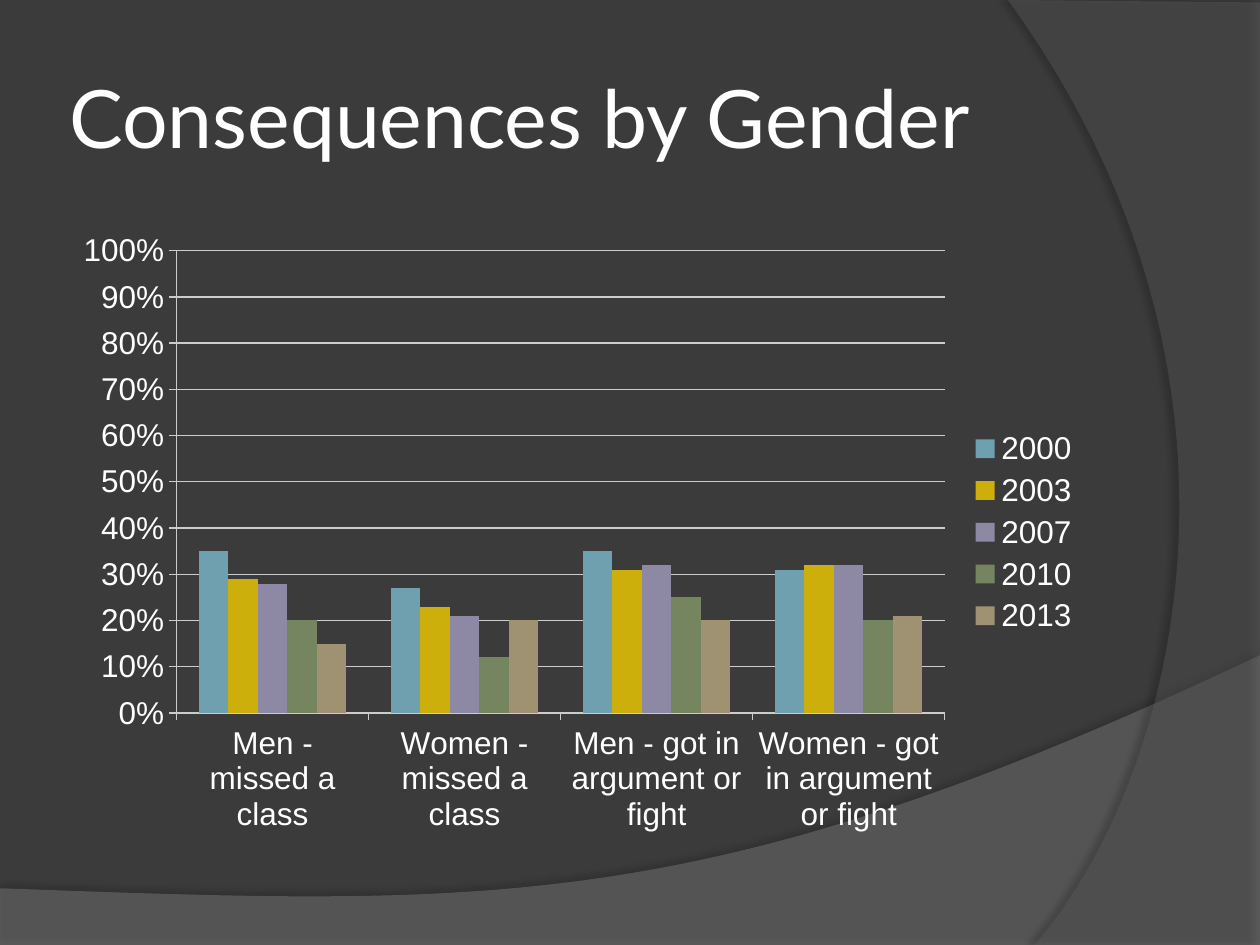
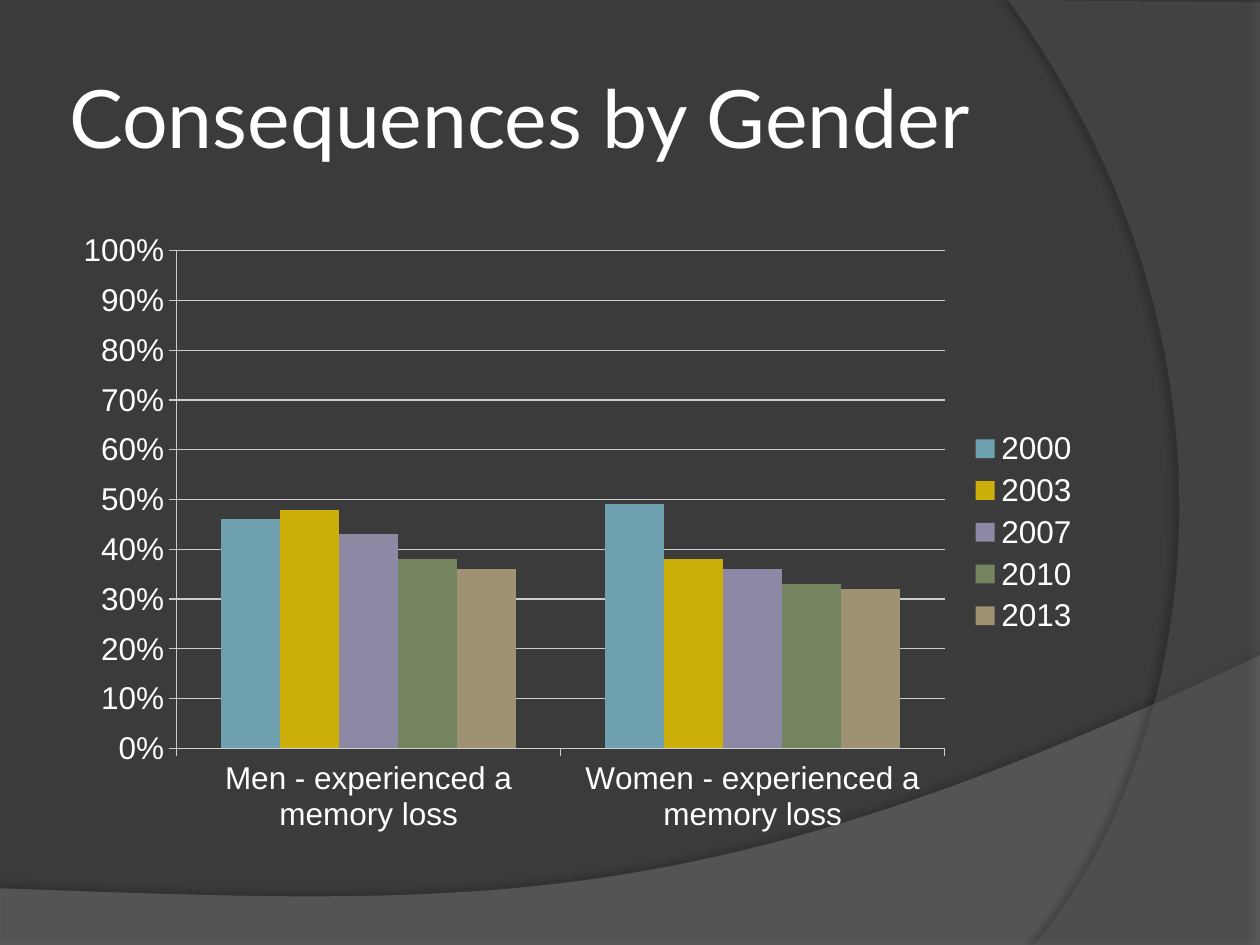
from lxml.etree import SubElement
from pptx import Presentation
from pptx.chart.data import CategoryChartData as Data
from pptx.dml.color import RGBColor as RGB
from pptx.enum.chart import XL_CHART_TYPE as Kind, XL_LEGEND_POSITION as Pos, XL_TICK_MARK as Tick
from pptx.enum.text import MSO_ANCHOR as Anchor
from pptx.oxml.ns import qn
from pptx.util import Inches, Pt

DARK = RGB(0x3B, 0x3B, 0x3B)
WAVE = RGB(0x7F, 0x7F, 0x7F)
ARC = RGB(0x5E, 0x5E, 0x5E)
WHITE = RGB(0xFF, 0xFF, 0xFF)
GRID = RGB(0xCC, 0xCC, 0xCC)
BARS = {
    "2000": RGB(0x6E, 0xA0, 0xB0),
    "2003": RGB(0xCC, 0xAF, 0x0A),
    "2007": RGB(0x8D, 0x89, 0xA4),
    "2010": RGB(0x74, 0x85, 0x60),
    "2013": RGB(0x9E, 0x92, 0x73),
}
TITLE = "Consequences by Gender"
LEFT, WIDTH = 0.5, 8.17

CHARTS = [
    {
        "Men - missed a class": (0.35, 0.29, 0.28, 0.2, 0.15),
        "Women - missed a class": (0.27, 0.23, 0.21, 0.12, 0.2),
        "Men - got in argument or fight": (0.35, 0.31, 0.32, 0.25, 0.2),
        "Women - got in argument or fight": (0.31, 0.32, 0.32, 0.2, 0.21),
    },
    {
        "Men - experienced a memory loss": (0.46, 0.48, 0.43, 0.38, 0.36),
        "Women - experienced a memory loss": (0.49, 0.38, 0.36, 0.33, 0.32),
    },
]


def curve(a, b, c, d, steps=48):
    points = []
    for i in range(1, steps + 1):
        t = i / steps
        u = 1 - t
        points.append(tuple(
            u**3 * p + 3 * u * u * t * q + 3 * u * t * t * r + t**3 * s
            for p, q, r, s in zip(a, b, c, d)
        ))
    return points


def add_band(slide, points, color, alpha, shade, dist, angle):
    start, *rest = [(Inches(x), Inches(y)) for x, y in points]
    pen = slide.shapes.build_freeform(*start)
    pen.add_line_segments(rest, close=True)
    band = pen.convert_to_shape()
    band.shadow.inherit = False
    band.line.fill.background()
    band.fill.solid()
    band.fill.fore_color.rgb = color
    props = band.element.spPr
    tint = props.find(qn("a:solidFill"))[0]
    SubElement(tint, qn("a:alpha"), val=str(alpha * 1000))
    glow = SubElement(
        props.find(qn("a:effectLst")), qn("a:outerShdw"),
        blurRad=str(Pt(4)), dist=str(Pt(dist)), dir=str(angle * 60000),
        algn="ctr", rotWithShape="0",
    )
    hue = SubElement(glow, qn("a:srgbClr"), val="000000")
    SubElement(hue, qn("a:alpha"), val=str(shade * 1000))


def add_bands(slide):
    wave = [(0, 7.05), (0, 7.51), (10, 7.51), (10, 5.2)]
    wave += curve((10, 5.2), (5.59, 7.29), (3.91, 7.19), (0, 7.05))
    add_band(slide, wave, WAVE, 45, 35, 3.5, 270)
    arc = [(10, 0.02), (10, 7.5), (8.21, 7.5)]
    arc += curve((8.21, 7.5), (9.35, 6.19), (10.18, 3), (8, 0))
    add_band(slide, arc, ARC, 40, 45, 4, 180)


def add_title(slide, text):
    box = slide.shapes.add_textbox(
        Inches(LEFT), Inches(0.3), Inches(WIDTH), Inches(1.25))
    frame = box.text_frame
    frame.word_wrap = True
    frame.vertical_anchor = Anchor.MIDDLE
    frame.margin_left = frame.margin_right = Inches(0.05)
    frame.margin_top = frame.margin_bottom = Inches(0.05)
    line = frame.paragraphs[0]
    line.text = text
    line.font.name = "Lato"
    line.font.size = Pt(46)
    line.font.color.rgb = WHITE


def style_line(line):
    line.color.rgb = GRID
    line.width = Pt(0.75)


def add_bars(slide, table):
    data = Data(number_format="0%")
    data.categories = list(table)
    for year, values in zip(BARS, zip(*table.values())):
        data.add_series(year, values)
    chart = slide.shapes.add_chart(
        Kind.COLUMN_CLUSTERED, Inches(LEFT), Inches(1.75),
        Inches(WIDTH), Inches(4.95), data).chart
    chart.has_title = False
    chart.font.name = "Arial"
    chart.font.size = Pt(18)
    chart.font.color.rgb = WHITE
    chart.has_legend = True
    chart.legend.position = Pos.RIGHT
    chart.legend.include_in_layout = False

    plot = chart.plots[0]
    plot.gap_width = 150
    plot.overlap = 0
    plot.vary_by_categories = False
    for series, color in zip(plot.series, BARS.values()):
        series.format.fill.solid()
        series.format.fill.fore_color.rgb = color

    for axis in (chart.category_axis, chart.value_axis):
        axis.major_tick_mark = Tick.OUTSIDE
        axis.minor_tick_mark = Tick.NONE
        style_line(axis.format.line)
    scale = chart.value_axis
    scale.minimum_scale = 0
    scale.maximum_scale = 1
    scale.major_unit = 0.1
    scale.has_major_gridlines = True
    style_line(scale.major_gridlines.format.line)
    scale.tick_labels.number_format = "0%"
    scale.tick_labels.number_format_is_linked = False


def main():
    deck = Presentation()
    deck.slide_width = Inches(10)
    deck.slide_height = Inches(7.5)
    back = deck.slide_master.background.fill
    back.solid()
    back.fore_color.rgb = DARK
    for table in CHARTS:
        slide = deck.slides.add_slide(deck.slide_layouts[6])
        add_bands(slide)
        add_title(slide, TITLE)
        add_bars(slide, table)
    deck.save("out.pptx")


if __name__ == "__main__":
    main()
